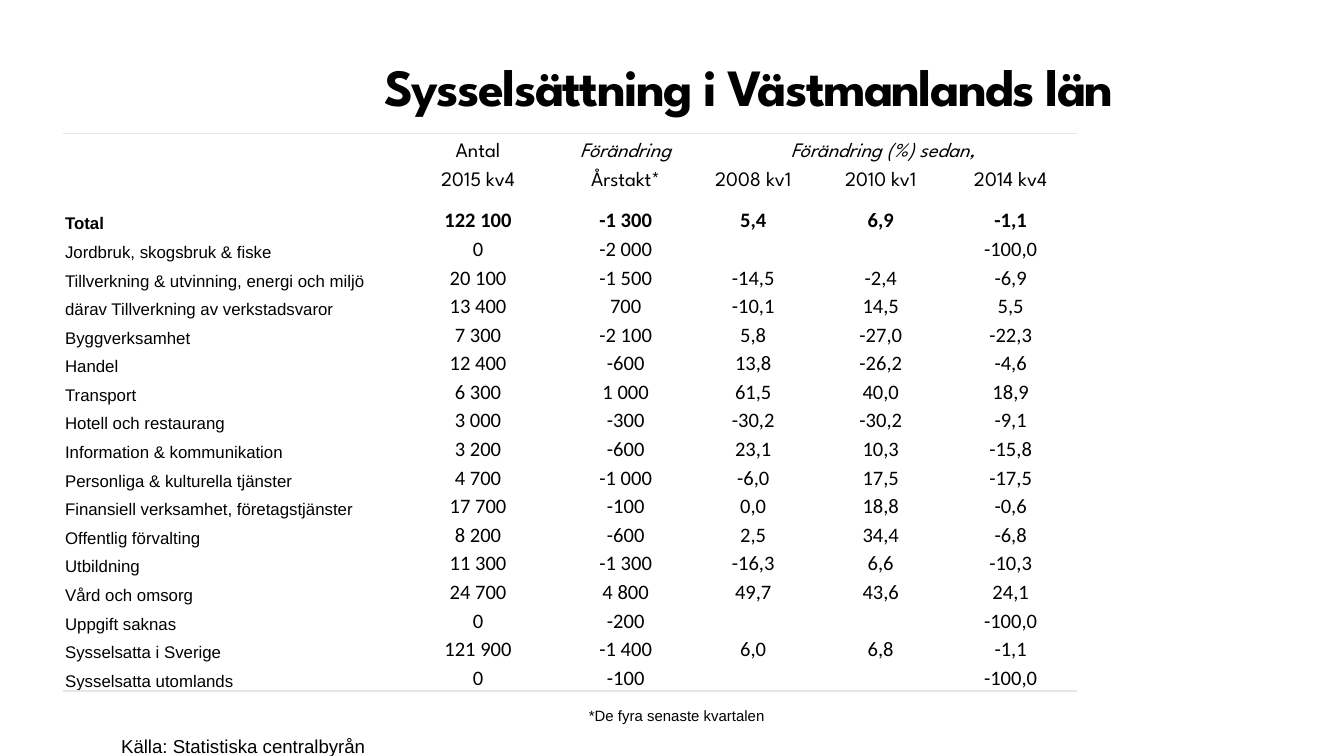
from lxml import etree
from pptx import Presentation
from pptx.dml.color import RGBColor
from pptx.enum import text as t
from pptx.oxml import ns
from pptx.util import Cm, Pt

TITLE = "Sysselsättning i Västmanlands län"
NOTES = [  # text, size, left, top, width, height
    ("Källa: Statistiska centralbyrån", 10, 2.29, 13.46, 5, 1.07),
    ("*De fyra senaste kvartalen", 8, 11.13, 12.83, 3.6, 1.24),
]
HEADS = [
    ("", "Antal", "Förändring", "Förändring (%) sedan,", "", ""),
    ("", "2015 kv4", "Årstakt*", "2008 kv1", "2010 kv1", "2014 kv4"),
]
ROWS = [
    ("Total", "122 100", "-1 300", "5,4", "6,9", "-1,1"),
    ("Jordbruk, skogsbruk & fiske", "0", "-2 000", "", "", "-100,0"),
    ("Tillverkning & utvinning, energi och miljö", "20 100", "-1 500", "-14,5", "-2,4", "-6,9"),
    ("därav Tillverkning av verkstadsvaror", "13 400", "700", "-10,1", "14,5", "5,5"),
    ("Byggverksamhet", "7 300", "-2 100", "5,8", "-27,0", "-22,3"),
    ("Handel", "12 400", "-600", "13,8", "-26,2", "-4,6"),
    ("Transport", "6 300", "1 000", "61,5", "40,0", "18,9"),
    ("Hotell och restaurang", "3 000", "-300", "-30,2", "-30,2", "-9,1"),
    ("Information & kommunikation", "3 200", "-600", "23,1", "10,3", "-15,8"),
    ("Personliga & kulturella tjänster", "4 700", "-1 000", "-6,0", "17,5", "-17,5"),
    ("Finansiell verksamhet, företagstjänster", "17 700", "-100", "0,0", "18,8", "-0,6"),
    ("Offentlig förvalting", "8 200", "-600", "2,5", "34,4", "-6,8"),
    ("Utbildning", "11 300", "-1 300", "-16,3", "6,6", "-10,3"),
    ("Vård och omsorg", "24 700", "4 800", "49,7", "43,6", "24,1"),
    ("Uppgift saknas", "0", "-200", "", "", "-100,0"),
    ("Sysselsatta i Sverige", "121 900", "-1 400", "6,0", "6,8", "-1,1"),
    ("Sysselsatta utomlands", "0", "-100", "", "", "-100,0"),
]
COLS = [6.25, 3.17, 2.41, 2.41, 2.41, 2.5]
ROW, TALL = 0.54, 0.81
PLAIN = "{2D5ABB26-0587-4C30-8999-92F81FD0307C}"  # table style without lines or fills
HEAD = {"name": "League Spartan", "size": Pt(11)}
LABEL = {"name": "Arial", "size": Pt(9)}
VALUE = {"name": "Calibri", "size": Pt(11)}


def color(code):
    return RGBColor.from_string(code)


def apply(obj, form):
    for key, val in form.items():
        setattr(obj, key, val)


def write(para, words, form):
    run = para.add_run()
    run.text = words
    apply(run.font, form)
    run.font.color.rgb = color("000000")
    return run


def add_box(slide, left, top, wide, high):
    frame = slide.shapes.add_textbox(Cm(left), Cm(top), Cm(wide), Cm(high)).text_frame
    apply(frame, {"margin_left": 0, "margin_right": 0, "margin_top": 0,
                  "margin_bottom": 0, "word_wrap": True})
    return frame.paragraphs[0]


def rule(cell, tag):
    """Draw a thin grey border on one side of a cell."""
    line = etree.Element(ns.qn(tag), w=str(Pt(1)))
    fill = etree.SubElement(line, ns.qn("a:solidFill"))
    etree.SubElement(fill, ns.qn("a:srgbClr"), val="E6E6E6")
    cell._tc.get_or_add_tcPr().insert(0, line)


def fill_cell(cell, words, form, align):
    apply(cell, {"margin_left": Cm(0.03), "margin_right": Cm(0.03), "margin_top": Cm(0.03),
                 "margin_bottom": 0, "vertical_anchor": t.MSO_ANCHOR.BOTTOM})
    cell.fill.background()
    para = cell.text_frame.paragraphs[0]
    para.alignment = align
    if words:
        write(para, words, form)
    else:  # keeps an empty cell from stretching its row
        etree.SubElement(para._p, ns.qn("a:endParaRPr"), sz="900")


def add_grid(slide):
    data = HEADS + ROWS
    first, last = len(HEADS), len(data) - 1
    highs = [TALL if r == first else ROW for r in range(len(data))]
    grid = slide.shapes.add_table(len(data), len(COLS), Cm(1.2), Cm(2.52),
                                  Cm(sum(COLS)), Cm(sum(highs))).table
    apply(grid, {"first_row": False, "horz_banding": False})
    grid._tbl.tblPr.find(ns.qn("a:tableStyleId")).text = PLAIN
    for col, wide in zip(grid.columns, COLS):
        col.width = Cm(wide)
    for row, high in zip(grid.rows, highs):
        row.height = Cm(high)
    for r, line in enumerate(data):
        for c, words in enumerate(line):
            cell = grid.cell(r, c)
            base = HEAD if r < first else VALUE if c else LABEL
            form = {**base, "bold": r == first, "italic": r == 0 and c > 1}
            fill_cell(cell, words, form, t.PP_ALIGN.CENTER if c else t.PP_ALIGN.LEFT)
            if r == 0:
                rule(cell, "a:lnT")
            if r == last:
                rule(cell, "a:lnB")
    grid.cell(0, 3).merge(grid.cell(0, 5))


def main():
    deck = Presentation()
    apply(deck, {"slide_width": Cm(25.4), "slide_height": Cm(14.28)})
    slide = deck.slides.add_slide(deck.slide_layouts[6])
    head = write(add_box(slide, 7.26, 1.02, 23.37, 2.03), TITLE,
                 {"name": "League Spartan", "size": Pt(28), "bold": True})
    head._r.get_or_add_rPr().set("spc", "-85")
    add_grid(slide)
    for words, size, *place in NOTES:
        para = add_box(slide, *place)
        para.line_spacing = Pt(24)
        write(para, words, {"name": "Arial", "size": Pt(size)})
    deck.save("out.pptx")


if __name__ == "__main__":
    main()
